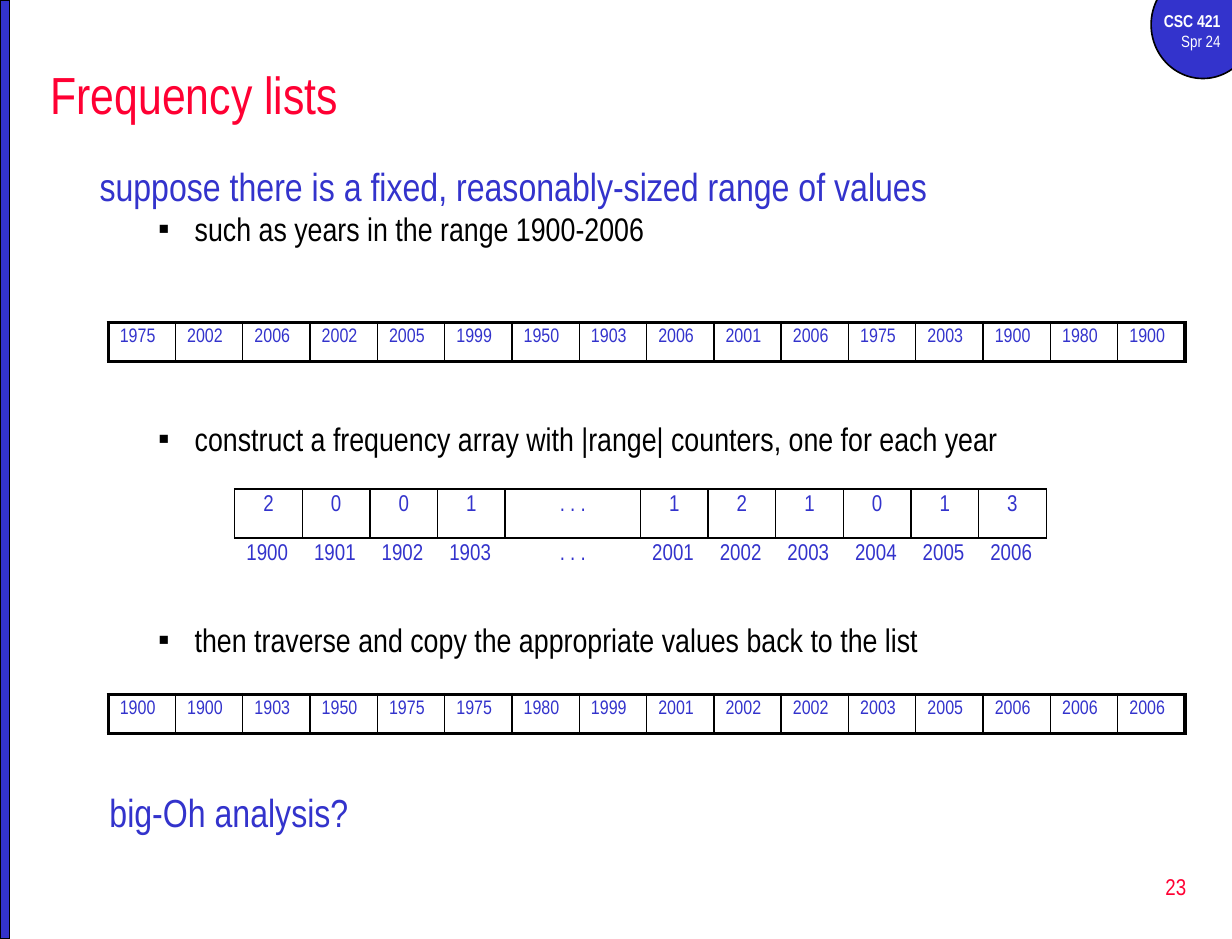
from dataclasses import dataclass

from lxml.etree import SubElement
from pptx import Presentation
from pptx.dml.color import RGBColor
from pptx.enum.shapes import MSO_SHAPE as Shape
from pptx.enum.text import MSO_ANCHOR as Anchor, MSO_AUTO_SIZE as AutoSize, PP_ALIGN as Align
from pptx.oxml.ns import qn
from pptx.util import Cm, Pt


@dataclass(frozen=True)
class Theme:
    font: str = "Arial Narrow"
    red: str = "FF0033"
    blue: str = "3333CC"
    black: str = "000000"
    white: str = "FFFFFF"
    title: float = 32
    heading: float = 24
    bullet: float = 20
    counter: float = 14
    value: float = 12
    course: float = 10.5
    term: float = 10
    thin: float = 1
    thick: float = 2.25
    gap: float = 0.23


@dataclass(frozen=True)
class Box:
    left: float
    top: float
    width: float
    height: float

    def lengths(self):
        return Cm(self.left), Cm(self.top), Cm(self.width), Cm(self.height)


THEME = Theme()
ELLIPSIS = ". . ."
UNSORTED = [1975, 2002, 2006, 2002, 2005, 1999, 1950, 1903,
            2006, 2001, 2006, 1975, 2003, 1900, 1980, 1900]
COUNTS = [2, 0, 0, 1, ELLIPSIS, 1, 2, 1, 0, 1, 3]
YEARS = [*range(1900, 1904), ELLIPSIS, *range(2001, 2007)]


def format_para(para, size, color, align=Align.LEFT, bold=False, before=0):
    para.alignment = align
    para.space_before = Pt(before)
    for span in para.runs:
        span.font.name = THEME.font
        span.font.size = Pt(size)
        span.font.bold = bold
        span.font.color.rgb = RGBColor.from_string(color)


def format_heading(para):
    format_para(para, THEME.heading, THEME.blue, before=THEME.gap * THEME.heading)


def format_bullet(para, before=THEME.gap * THEME.bullet):
    format_para(para, THEME.bullet, THEME.black, before=before)
    para.level = 1
    para.line_spacing = 0.8
    properties = para._p.get_or_add_pPr()
    properties.set("marL", str(Cm(2.06)))
    properties.set("indent", str(Cm(-0.79)))
    SubElement(properties, qn("a:buChar"), char="▪")


def remove_bullet(para):
    properties = para._p.get_or_add_pPr()
    properties.set("marL", "0")
    properties.set("indent", "0")
    SubElement(properties, qn("a:buNone"))


def fill_placeholder(holder, box, text, anchor=Anchor.TOP):
    holder.left, holder.top, holder.width, holder.height = box.lengths()
    frame = holder.text_frame
    frame.text = text
    frame.auto_size = AutoSize.NONE
    frame.vertical_anchor = anchor
    return frame.paragraphs


def add_text(page, box, text, anchor=Anchor.TOP):
    frame = page.shapes.add_textbox(*box.lengths()).text_frame
    frame.word_wrap = True
    frame.vertical_anchor = anchor
    frame.text = text
    return frame.paragraphs


def add_solid(page, kind, box):
    shape = page.shapes.add_shape(kind, *box.lengths())
    shape.shadow.inherit = False
    shape.fill.solid()
    shape.fill.fore_color.rgb = RGBColor.from_string(THEME.blue)
    shape.line.color.rgb = RGBColor.from_string(THEME.black)
    shape.line.width = Pt(THEME.thin)


def set_borders(cell, left, right, top, bottom):
    properties = cell._tc.get_or_add_tcPr()
    for side, width in zip("LRTB", (left, right, top, bottom)):
        line = SubElement(properties, qn(f"a:ln{side}"), w=str(Pt(width)))
        if width:
            fill = SubElement(line, qn("a:solidFill"))
            SubElement(fill, qn("a:srgbClr"), val=THEME.black)
        else:
            SubElement(line, qn("a:noFill"))
    cell.fill.background()


def add_grid(page, box, rows, weights):
    table = page.shapes.add_table(len(rows), len(weights), *box.lengths()).table
    table.first_row = table.horz_banding = False
    for column, weight in zip(table.columns, weights):
        column.width = Cm(box.width * weight / sum(weights))
    for row, values in zip(table.rows, rows):
        row.height = Cm(box.height / len(rows))
        for cell, value in zip(row.cells, values):
            cell.text = str(value)
    return table


def add_year_list(page, box, years):
    table = add_grid(page, box, [years], [1] * len(years))
    last = len(years) - 1
    for index, cell in enumerate(table.rows[0].cells):
        format_para(cell.text_frame.paragraphs[0], THEME.value, THEME.blue)
        set_borders(cell,
                    THEME.thin if index else THEME.thick,
                    THEME.thin if index < last else THEME.thick,
                    THEME.thick, THEME.thick)


def add_frequency_array(page, box):
    weights = [2 if year == ELLIPSIS else 1 for year in YEARS]
    table = add_grid(page, box, [COUNTS, YEARS], weights)
    counters, labels = table.rows
    for cell in counters.cells:
        format_para(cell.text_frame.paragraphs[0], THEME.counter, THEME.blue, Align.CENTER)
        set_borders(cell, *[THEME.thin] * 4)
    for cell in labels.cells:
        align = Align.CENTER if cell.text == ELLIPSIS else Align.LEFT
        format_para(cell.text_frame.paragraphs[0], THEME.counter, THEME.blue, align)
        set_borders(cell, 0, 0, THEME.thin, 0)


def add_course_badge(page, box):
    add_solid(page, Shape.OVAL, box)
    label = Box(box.left - 0.36, box.top + 0.73, 2.11, 1.17)
    course, term = add_text(page, label, "CSC 421\nSpr 24")
    format_para(course, THEME.course, THEME.white, Align.RIGHT, bold=True)
    format_para(term, THEME.term, THEME.white, Align.RIGHT)


def fill_title(holder, box):
    para, = fill_placeholder(holder, box, "Frequency lists", Anchor.MIDDLE)
    format_para(para, THEME.title, THEME.red)


def fill_premise(holder, box):
    heading, example = fill_placeholder(
        holder, box,
        "suppose there is a fixed, reasonably-sized range of values\n"
        "such as years in the range 1900-2006")
    format_heading(heading)
    remove_bullet(heading)
    format_bullet(example)


def fill_steps(holder, box):
    construct, traverse = fill_placeholder(
        holder, box,
        "construct a frequency array with |range| counters, one for each year\n"
        "then traverse and copy the appropriate values back to the list")
    format_bullet(construct)
    format_bullet(traverse, before=104)


def main():
    deck = Presentation()
    deck.slide_width, deck.slide_height = Cm(26.67), Cm(20.32)
    page = deck.slides.add_slide(deck.slide_layouts.get_by_name("Two Content"))
    title, premise, steps = page.placeholders
    add_course_badge(page, Box(24.92, -0.63, 2.24, 2.33))
    add_solid(page, Shape.RECTANGLE, Box(0, 0, 0.21, 20.32))
    fill_title(title, Box(0.84, 1.07, 25.2, 1.9))
    fill_premise(premise, Box(1.9, 3.38, 23.5, 2.97))
    add_year_list(page, Box(2.34, 6.98, 23.32, 0.85), UNSORTED)
    fill_steps(steps, Box(1.9, 9.1, 23.28, 5.08))
    add_frequency_array(page, Box(5.08, 10.58, 17.57, 2.12))
    add_year_list(page, Box(2.34, 15.03, 23.32, 0.85), sorted(UNSORTED))
    question, = add_text(page, Box(2.12, 16.93, 6.35, 1.27), "big-Oh analysis?")
    format_heading(question)
    number, = add_text(page, Box(20.37, 18.52, 5.56, 1.34), "23", Anchor.MIDDLE)
    format_para(number, THEME.counter, THEME.red, Align.RIGHT)
    deck.save("out.pptx")


if __name__ == "__main__":
    main()
